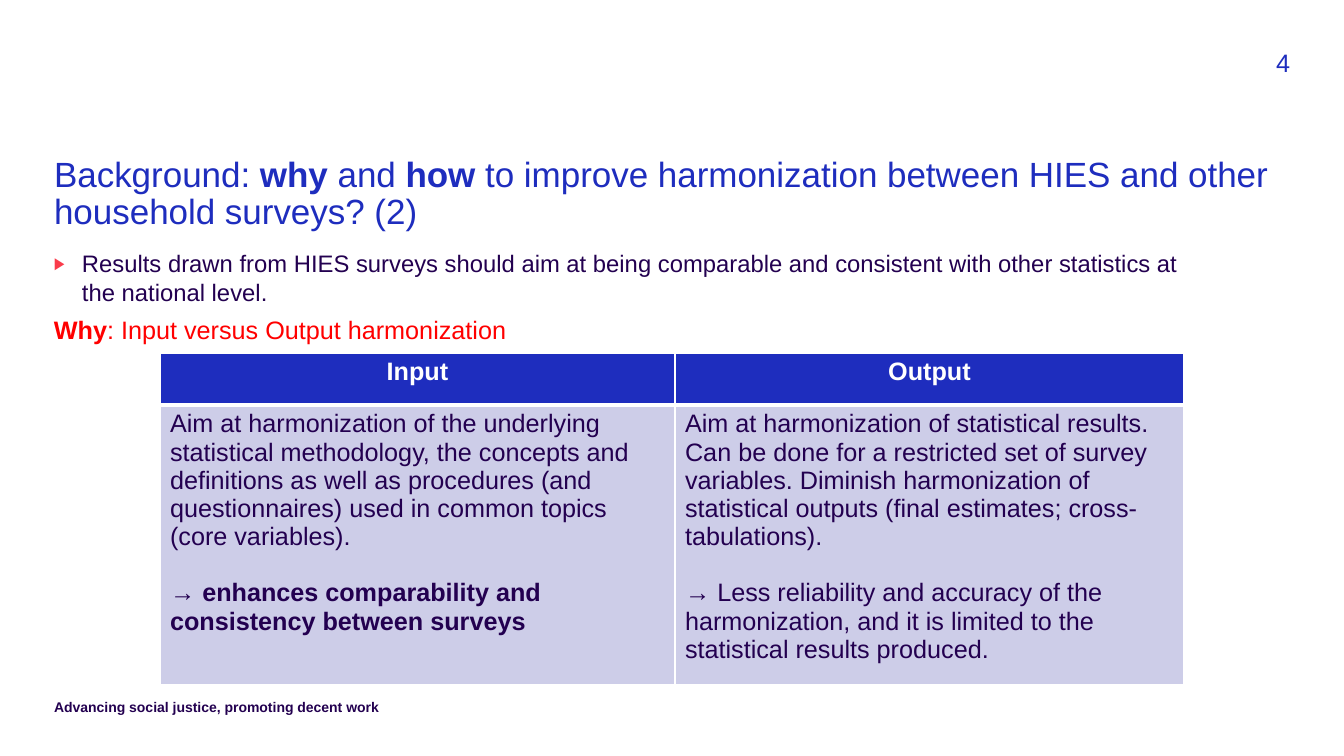
from pptx import Presentation
from pptx.dml.color import RGBColor
from pptx.enum.text import PP_ALIGN
from pptx.oxml import parse_xml
from pptx.oxml.ns import nsdecls
from pptx.util import Emu, Pt

CENTER, RIGHT = PP_ALIGN.CENTER, PP_ALIGN.RIGHT
PX = 914400 / 100.8
BLUE, INK, RED, WHITE = "1E2DBE", "230050", "FF0000", "FFFFFF"
MARKER, PALE = "FA3C4B", "CDCDE8"

TITLE = [("Background: ", False), ("why", True), (" and ", False), ("how", True),
         (" to improve harmonization between HIES and other household surveys? (2)", False)]
FINDING = [("Results drawn from HIES surveys should aim at being comparable and consistent "
            "with other statistics at the national level.", False)]
WHY = [("Why", True), (": Input versus Output harmonization", False)]
FOOTER = [("Advancing social justice, promoting decent work", True)]
PAGE = [("4", False)]
APPROACHES = [
    ("Input",
     [[("Aim at harmonization of the underlying statistical methodology, the concepts and "
        "definitions as well as procedures (and questionnaires) used in common topics "
        "(core variables).", False)]],
     [("→ ", False), ("enhances comparability and consistency between surveys", True)]),
    ("Output",
     [[("Aim at harmonization of statistical results.", False)],
      [("Can be done for a restricted set of survey variables. Diminish harmonization of "
        "statistical outputs (final estimates; cross-tabulations).", False)]],
     [("→ Less reliability and accuracy of the harmonization, and it is limited to the "
       "statistical results produced.", False)]),
]
COLUMN_WIDTHS = [515, 509]
ROW_HEIGHTS = [52, 264]


def px(length):
    return Emu(round(length * PX))


def rgb(value):
    return RGBColor.from_string(value)


def write(paragraph, parts, size, color, align=None):
    for words, bold in parts:
        run = paragraph.add_run()
        run.text = words
        run.font.name = "Arial"
        run.font.size = Pt(size)
        run.font.bold = bold
        run.font.color.rgb = rgb(color)
    if align is not None:
        paragraph.alignment = align


def add_frame(left, top, width, height):
    frame = slide.shapes.add_textbox(px(left), px(top), px(width), px(height)).text_frame
    frame.word_wrap = True
    frame.margin_left = frame.margin_right = frame.margin_top = frame.margin_bottom = 0
    return frame


def add_bullet(paragraph, indent):
    properties = paragraph._p.get_or_add_pPr()
    properties.set("marL", str(px(indent)))
    properties.set("indent", str(-px(indent)))
    for element in (f'<a:buClr {nsdecls("a")}><a:srgbClr val="{MARKER}"/></a:buClr>',
                    f'<a:buSzPct {nsdecls("a")} val="70000"/>',
                    f'<a:buFont {nsdecls("a")} typeface="Arial"/>',
                    f'<a:buChar {nsdecls("a")} char="▶"/>'):
        properties.append(parse_xml(element))


def style_cell(cell, fill, bottom_width):
    cell.fill.solid()
    cell.fill.fore_color.rgb = rgb(fill)
    properties = cell._tc.get_or_add_tcPr()
    widths = {"lnL": 1, "lnR": 1, "lnT": 1, "lnB": bottom_width}
    for position, (side, width) in enumerate(widths.items()):
        properties.insert(position, parse_xml(
            f'<a:{side} {nsdecls("a")} w="{Pt(width)}"><a:solidFill>'
            f'<a:srgbClr val="{WHITE}"/></a:solidFill></a:{side}>'))


deck = Presentation()
deck.slide_width, deck.slide_height = px(1344), px(756)
slide = deck.slides.add_slide(deck.slide_layouts[6])

title = add_frame(54, 157, 1236, 80).paragraphs[0]
title.line_spacing = 0.9
write(title, TITLE, 25, BLUE)

body = add_frame(54, 249, 1143, 98)
finding = body.paragraphs[0]
add_bullet(finding, 28)
write(finding, FINDING, 17, INK)
why = body.add_paragraph()
why.space_before = Pt(6)
write(why, WHY, 18, RED)

write(add_frame(54, 699, 618, 20).paragraphs[0], FOOTER, 10, INK)
write(add_frame(1231, 47, 59, 31).paragraphs[0], PAGE, 18, BLUE, RIGHT)

comparison = slide.shapes.add_table(2, len(APPROACHES), px(160), px(353),
                                    px(sum(COLUMN_WIDTHS)), px(sum(ROW_HEIGHTS))).table
for row, height in zip(comparison.rows, ROW_HEIGHTS):
    row.height = px(height)
for column, (heading, aims, effect) in enumerate(APPROACHES):
    comparison.columns[column].width = px(COLUMN_WIDTHS[column])
    header, detail = comparison.cell(0, column), comparison.cell(1, column)
    style_cell(header, BLUE, 3)
    style_cell(detail, PALE, 1)
    write(header.text_frame.paragraphs[0], [(heading, True)], 18, WHITE, CENTER)
    for position, aim in enumerate(aims):
        frame = detail.text_frame
        paragraph = frame.add_paragraph() if position else frame.paragraphs[0]
        write(paragraph, aim, 18, INK)
    conclusion = detail.text_frame.add_paragraph()
    conclusion.space_before = Pt(20)
    write(conclusion, effect, 18, INK)

deck.save("out.pptx")
